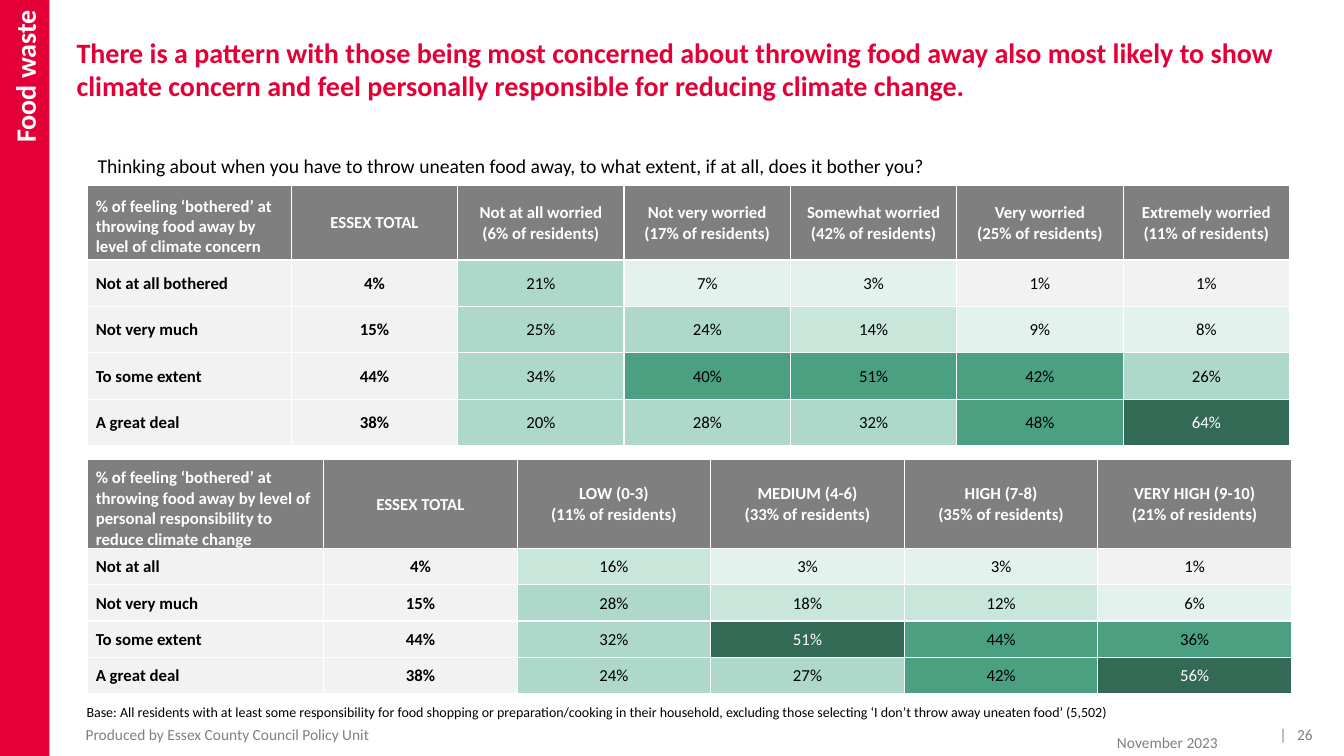
from dataclasses import dataclass

from lxml.etree import SubElement
from pptx import Presentation
from pptx.dml.color import RGBColor
from pptx.enum.shapes import MSO_SHAPE
from pptx.enum.text import MSO_ANCHOR, PP_ALIGN
from pptx.oxml.ns import qn
from pptx.slide import Slide
from pptx.table import _Cell
from pptx.text.text import TextFrame
from pptx.util import Emu, Pt

EMU_PER_PX = 9144
FONT = "Calibri"
COLOURS = {
    "red": "E40037",
    "white": "FFFFFF",
    "black": "000000",
    "footer": "808080",
    "header": "7F7F7F",
    "neutral": "F2F2F2",
    "pale": "E4F2ED",
    "light": "C9E6DB",
    "medium": "AED9CA",
    "strong": "4AA081",
    "dark": "326A56",
}
SHADE_LIMITS = [(2, "neutral"), (10, "pale"), (20, "light"), (35, "medium")]
Insets = tuple[int, int, int, int]


@dataclass(frozen=True)
class Style:
    size: int
    colour: str
    bold: bool = False
    align: PP_ALIGN = PP_ALIGN.LEFT
    anchor: MSO_ANCHOR = MSO_ANCHOR.TOP
    insets: Insets = (10, 5, 10, 5)
    line_spacing: float = 1.0
    space_after: int = 0


@dataclass(frozen=True)
class Label:
    text: str
    left: int
    top: int
    width: int
    height: int
    style: Style


@dataclass(frozen=True)
class CrossTable:
    top: int
    first_width: int
    column_width: int
    header_height: int
    row_height: int
    dark_from: int
    headers: list[str]
    rows: list[tuple[str, list[int]]]


LABELS = [
    Label(
        "There is a pattern with those being most concerned about throwing food away also "
        "most likely to show climate concern and feel personally responsible for reducing "
        "climate change.",
        76, 35, 1234, 108, Style(20, "red", bold=True, insets=(0, 0, 0, 0)),
    ),
    Label(
        "|   26", 1217, 721, 85, 15,
        Style(11, "footer", align=PP_ALIGN.RIGHT, anchor=MSO_ANCHOR.MIDDLE, insets=(10, 5, 0, 5)),
    ),
    Label(
        "Base: All residents with at least some responsibility for food shopping or "
        "preparation/cooking in their household, excluding those selecting ‘I don’t throw "
        "away uneaten food’ (5,502)",
        76, 693, 1155, 44, Style(10, "black"),
    ),
    Label(
        "Produced by Essex County Council Policy Unit", 76, 721, 654, 15,
        Style(11, "footer", anchor=MSO_ANCHOR.MIDDLE, insets=(9, 5, 10, 5)),
    ),
    Label(
        "November 2023", 968, 729, 240, 15,
        Style(11, "footer", align=PP_ALIGN.RIGHT, anchor=MSO_ANCHOR.MIDDLE, insets=(10, 5, 0, 5)),
    ),
    Label(
        "Thinking about when you have to throw uneaten food away, to what extent, if at all, "
        "does it bother you?",
        87, 146, 1008, 34, Style(14, "black", line_spacing=1.06, space_after=8),
    ),
]

TABLES = [
    CrossTable(
        184, 202, 165, 74, 46, 60,
        [
            "% of feeling ‘bothered’ at throwing food away by level of climate concern",
            "ESSEX TOTAL",
            "Not at all worried\n(6% of residents)",
            "Not very worried\n(17% of residents)",
            "Somewhat worried\n(42% of residents)",
            "Very worried\n(25% of residents)",
            "Extremely worried\n(11% of residents)",
        ],
        [
            ("Not at all bothered", [4, 21, 7, 3, 1, 1]),
            ("Not very much", [15, 25, 24, 14, 9, 8]),
            ("To some extent", [44, 34, 40, 51, 42, 26]),
            ("A great deal", [38, 20, 28, 32, 48, 64]),
        ],
    ),
    CrossTable(
        456, 234, 192, 87, 36, 50,
        [
            "% of feeling ‘bothered’ at throwing food away by level of personal "
            "responsibility to reduce climate change",
            "ESSEX TOTAL",
            "LOW (0-3)\n(11% of residents)",
            "MEDIUM (4-6)\n(33% of residents)",
            "HIGH (7-8)\n(35% of residents)",
            "VERY HIGH (9-10)\n(21% of residents)",
        ],
        [
            ("Not at all", [4, 16, 3, 3, 1]),
            ("Not very much", [15, 28, 18, 12, 6]),
            ("To some extent", [44, 32, 51, 44, 36]),
            ("A great deal", [38, 24, 27, 42, 56]),
        ],
    ),
]


def px(length: int) -> Emu:
    return Emu(length * EMU_PER_PX)


def colour(name: str) -> RGBColor:
    return RGBColor.from_string(COLOURS[name])


def write(frame: TextFrame, holder: TextFrame | _Cell, text: str, style: Style) -> None:
    frame.text = text
    frame.word_wrap = True
    holder.vertical_anchor = style.anchor
    holder.margin_left, holder.margin_top, holder.margin_right, holder.margin_bottom = map(
        px, style.insets
    )
    for para in frame.paragraphs:
        para.alignment = style.align
        para.line_spacing = style.line_spacing
        para.space_after = Pt(style.space_after)
        for span in para.runs:
            span.font.name = FONT
            span.font.size = Pt(style.size)
            span.font.bold = style.bold
            span.font.color.rgb = colour(style.colour)


def add_label(page: Slide, label: Label) -> None:
    box = page.shapes.add_textbox(px(label.left), px(label.top), px(label.width), px(label.height))
    write(box.text_frame, box.text_frame, label.text, label.style)


def add_section_band(page: Slide) -> None:
    band = page.shapes.add_shape(MSO_SHAPE.RECTANGLE, 0, 0, px(49), px(750))
    band.shadow.inherit = False
    band.fill.solid()
    band.fill.fore_color.rgb = colour("red")
    band.line.fill.background()
    style = Style(20, "white", True, PP_ALIGN.RIGHT, MSO_ANCHOR.MIDDLE, (10, 10, 10, 5))
    write(band.text_frame, band.text_frame, "Food waste", style)
    band.text_frame._txBody.bodyPr.set("vert", "vert270")


def shade(value: int, dark_from: int) -> str:
    if value >= dark_from:
        return "dark"
    return next((name for limit, name in SHADE_LIMITS if value < limit), "strong")


def fill_cell(cell: _Cell, text: str, fill: str, style: Style) -> None:
    write(cell.text_frame, cell, text, style)
    properties = cell._tc.get_or_add_tcPr()
    for side in ("lnL", "lnR", "lnT", "lnB"):
        border = SubElement(properties, qn(f"a:{side}"), w=str(Pt(1)))
        paint = SubElement(border, qn("a:solidFill"))
        SubElement(paint, qn("a:srgbClr"), val=COLOURS["white"])
    cell.fill.solid()
    cell.fill.fore_color.rgb = colour(fill)


def add_cross_table(page: Slide, data: CrossTable) -> None:
    widths = [data.first_width] + [data.column_width] * (len(data.headers) - 1)
    heights = [data.header_height] + [data.row_height] * len(data.rows)
    table = page.shapes.add_table(
        len(heights), len(widths), px(87), px(data.top), px(sum(widths)), px(sum(heights))
    ).table
    table.first_row = table.horz_banding = False
    for column, width in zip(table.columns, widths):
        column.width = px(width)
    for row, height in zip(table.rows, heights):
        row.height = px(height)

    middle, centre = MSO_ANCHOR.MIDDLE, PP_ALIGN.CENTER
    for index, header in enumerate(data.headers):
        align, insets = (centre, (8, 1, 8, 0)) if index else (PP_ALIGN.LEFT, (8, 8, 8, 0))
        style = Style(12, "white", True, align, middle, insets)
        fill_cell(table.cell(0, index), header, "header", style)
    for line, (answer, values) in enumerate(data.rows, start=1):
        style = Style(12, "black", True, anchor=middle, insets=(8, 1, 4, 0))
        fill_cell(table.cell(line, 0), answer, "neutral", style)
        for index, value in enumerate(values, start=1):
            is_total = index == 1
            fill = "neutral" if is_total else shade(value, data.dark_from)
            ink = "white" if fill == "dark" else "black"
            style = Style(12, ink, is_total, centre, middle, (1, 1, 1, 0))
            fill_cell(table.cell(line, index), f"{value}%", fill, style)


def main() -> None:
    deck = Presentation()
    deck.slide_width, deck.slide_height = px(1333), px(750)
    page = deck.slides.add_slide(deck.slide_layouts[6])
    add_section_band(page)
    for label in LABELS:
        add_label(page, label)
    for data in TABLES:
        add_cross_table(page, data)
    deck.save("out.pptx")


if __name__ == "__main__":
    main()
